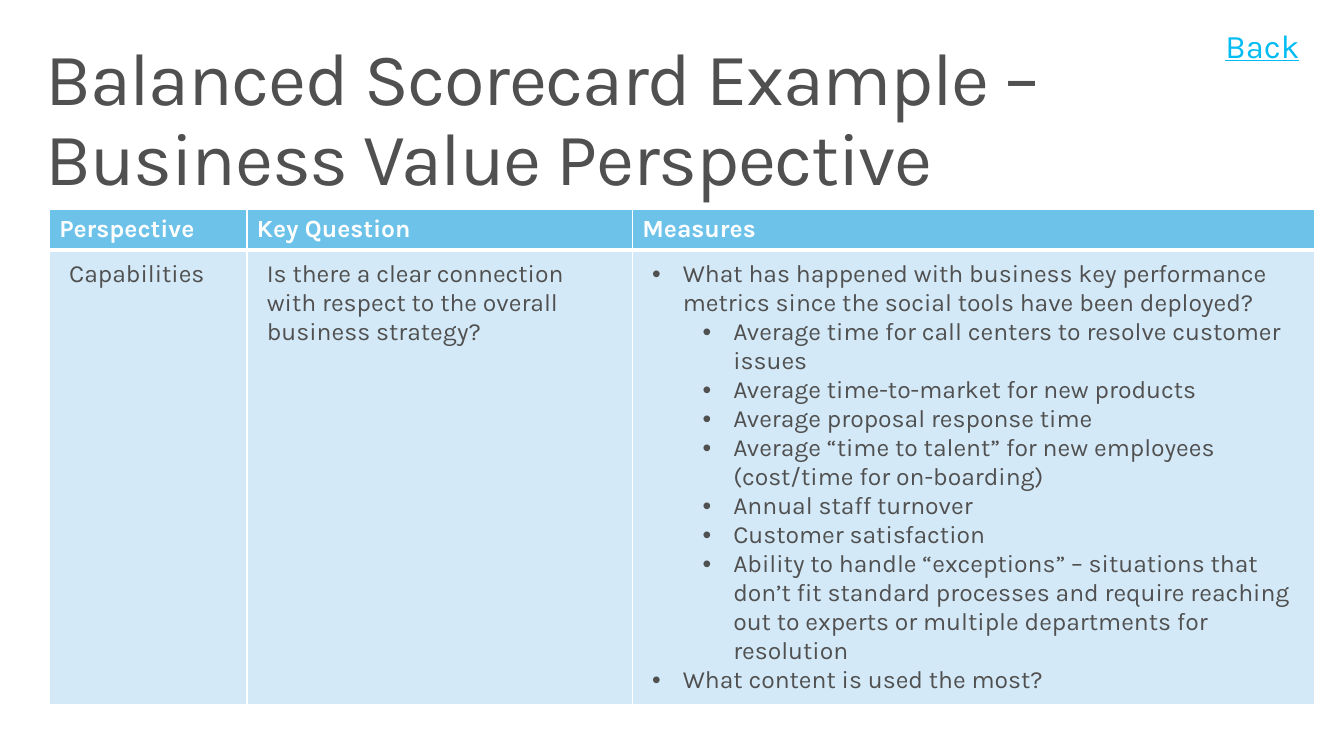
from dataclasses import dataclass

from lxml.etree import SubElement
from pptx import Presentation
from pptx.dml.color import RGBColor
from pptx.enum.text import MSO_ANCHOR, MSO_AUTO_SIZE, PP_ALIGN
from pptx.oxml.ns import qn
from pptx.util import Inches, Pt

FONT = "Karla"
WHITE = "FFFFFF"
GREY = "505050"
CYAN = "00BCF2"
HEADER_BLUE = "6DC2E9"
BODY_BLUE = "D4E9F7"
BULLET_HANG = 0.31


@dataclass(frozen=True)
class Measure:
    text: str
    level: int = 0


@dataclass(frozen=True)
class Column:
    heading: str
    width: float
    entries: tuple[Measure, ...]
    bulleted: bool = False


@dataclass(frozen=True)
class RowStyle:
    height: float
    fill: str
    color: str
    bold: bool
    margin_x: float
    margin_y: float
    top_line: float
    bottom_line: float


COLUMNS = (
    Column("Perspective", 2, (Measure("Capabilities"),)),
    Column("Key Question", 3.9, (
        Measure("Is there a clear connection with respect to the overall business strategy?"),
    )),
    Column("Measures", 6.9, (
        Measure("What has happened with business key performance metrics "
                "since the social tools have been deployed?"),
        Measure("Average time for call centers to resolve customer issues", 1),
        Measure("Average time-to-market for new products", 1),
        Measure("Average proposal response time", 1),
        Measure("Average “time to talent” for new employees (cost/time for on-boarding)", 1),
        Measure("Annual staff turnover", 1),
        Measure("Customer satisfaction", 1),
        Measure("Ability to handle “exceptions” – situations that don’t fit standard "
                "processes and require reaching out to experts or multiple "
                "departments for resolution", 1),
        Measure("What content is used the most?"),
    ), bulleted=True),
)
HEADER = RowStyle(0.41, HEADER_BLUE, WHITE, True, 0.1, 0.05, 1, 3)
BODY = RowStyle(4.6, BODY_BLUE, GREY, False, 0.2, 0.1, 3, 1)


def rgb(color: str) -> RGBColor:
    return RGBColor.from_string(color)


def format_runs(paragraph, size: float, color: str, bold: bool = False) -> None:
    for run in paragraph.runs:
        run.font.name = FONT
        run.font.size = Pt(size)
        run.font.bold = bold
        run.font.color.rgb = rgb(color)


def set_margins(target, x: float, y: float) -> None:
    target.margin_left = target.margin_right = Inches(x)
    target.margin_top = target.margin_bottom = Inches(y)


def add_bullet(paragraph, level: int) -> None:
    paragraph.level = level
    properties = paragraph._p.get_or_add_pPr()
    properties.set("marL", str(Inches(0.82 if level else BULLET_HANG)))
    properties.set("indent", str(-Inches(BULLET_HANG)))
    SubElement(properties, qn("a:buFont"), typeface="Arial")
    SubElement(properties, qn("a:buChar"), char="•")


def add_borders(cell, style: RowStyle) -> None:
    properties = cell._tc.get_or_add_tcPr()
    widths = {"L": 1, "R": 1, "T": style.top_line, "B": style.bottom_line}
    for side, width in widths.items():
        line = SubElement(properties, qn(f"a:ln{side}"), w=str(Pt(width)))
        fill = SubElement(line, qn("a:solidFill"))
        SubElement(fill, qn("a:srgbClr"), val=WHITE)


def fill_cell(cell, entries: tuple[Measure, ...], style: RowStyle, bulleted: bool) -> None:
    add_borders(cell, style)
    cell.fill.solid()
    cell.fill.fore_color.rgb = rgb(style.fill)
    set_margins(cell, style.margin_x, style.margin_y)
    cell.text_frame.text = "\n".join(entry.text for entry in entries)
    for paragraph, entry in zip(cell.text_frame.paragraphs, entries):
        if bulleted:
            add_bullet(paragraph, entry.level)
        format_runs(paragraph, 18, style.color, style.bold)


def add_title(slide) -> None:
    title = slide.shapes.title
    title.left, title.top = Inches(0.3), Inches(0.32)
    title.width, title.height = Inches(13), Inches(1)
    frame = title.text_frame
    frame.text = "Balanced Scorecard Example – Business Value Perspective"
    frame.word_wrap = True
    frame.auto_size = MSO_AUTO_SIZE.NONE
    frame.vertical_anchor = MSO_ANCHOR.TOP
    set_margins(frame, 0.16, 0.1)
    heading = frame.paragraphs[0]
    heading.alignment = PP_ALIGN.LEFT
    heading.line_spacing = 0.9
    format_runs(heading, 54, GREY)
    heading.runs[0].font._element.set("spc", "-100")


def add_scorecard(slide) -> None:
    scorecard = slide.shapes.add_table(
        2, len(COLUMNS), Inches(0.5), Inches(2.12),
        Inches(sum(column.width for column in COLUMNS)),
        Inches(HEADER.height + BODY.height),
    ).table
    for row, style in zip(scorecard.rows, (HEADER, BODY)):
        row.height = Inches(style.height)
    for index, column in enumerate(COLUMNS):
        scorecard.columns[index].width = Inches(column.width)
        fill_cell(scorecard.cell(0, index), (Measure(column.heading),), HEADER, False)
        fill_cell(scorecard.cell(1, index), column.entries, BODY, column.bulleted)


def add_back_label(slide) -> None:
    frame = slide.shapes.add_textbox(
        Inches(11.85), Inches(0.14), Inches(1.5), Inches(0.69)).text_frame
    frame.text = "Back"
    frame.word_wrap = True
    frame.auto_size = MSO_AUTO_SIZE.SHAPE_TO_FIT_TEXT
    set_margins(frame, 0.2, 0.16)
    back = frame.paragraphs[0]
    back.alignment = PP_ALIGN.RIGHT
    back.line_spacing = 0.9
    back.space_after = Pt(6)
    format_runs(back, 24, CYAN)
    back.runs[0].font.underline = True


def main() -> None:
    presentation = Presentation()
    presentation.slide_width = Inches(13.6)
    presentation.slide_height = Inches(7.65)
    slide = presentation.slides.add_slide(presentation.slide_layouts[5])
    add_title(slide)
    add_scorecard(slide)
    add_back_label(slide)
    presentation.save("out.pptx")


if __name__ == "__main__":
    main()
